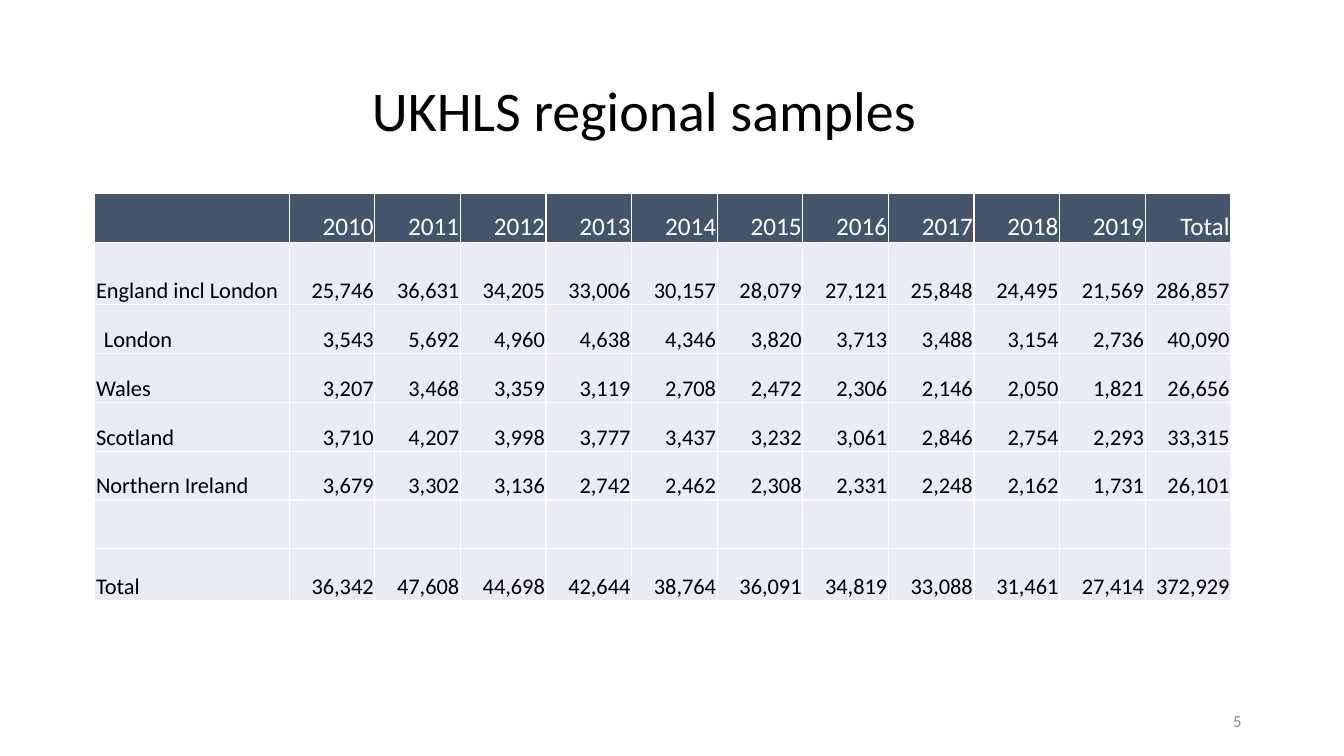
import dataclasses

import pptx
import pptx.dml.color
import pptx.enum.text
import pptx.oxml
import pptx.oxml.ns
import pptx.util

Cm = pptx.util.Cm
Pt = pptx.util.Pt
Align = pptx.enum.text.PP_ALIGN
Anchor = pptx.enum.text.MSO_ANCHOR


@dataclasses.dataclass(frozen=True)
class Theme:
    font: str = "Calibri"
    ink: str = "000000"
    paper: str = "FFFFFF"
    header: str = "44546A"
    body: str = "E9EBF5"
    muted: str = "8C8C8C"
    title_size: int = 40
    header_size: int = 18
    body_size: int = 16
    number_size: int = 12
    border_width: int = 1


@dataclasses.dataclass(frozen=True)
class Box:
    left: float
    top: float
    width: float
    height: float

    def lengths(self):
        return [Cm(value) for value in dataclasses.astuple(self)]


THEME = Theme()
LABEL_WIDTH = 4.9
ROW_HEIGHTS = [1.23, 1.57, 1.23, 1.23, 1.23, 1.23, 1.23, 1.3]
CELL_INSET = 0.03
NESTED_INSET = 0.23
NESTED_REGION = "London"

HEADINGS = ["", *map(str, range(2010, 2020)), "Total"]
SAMPLES = {
    "England incl London": [25746, 36631, 34205, 33006, 30157, 28079, 27121, 25848, 24495, 21569, 286857],
    "London": [3543, 5692, 4960, 4638, 4346, 3820, 3713, 3488, 3154, 2736, 40090],
    "Wales": [3207, 3468, 3359, 3119, 2708, 2472, 2306, 2146, 2050, 1821, 26656],
    "Scotland": [3710, 4207, 3998, 3777, 3437, 3232, 3061, 2846, 2754, 2293, 33315],
    "Northern Ireland": [3679, 3302, 3136, 2742, 2462, 2308, 2331, 2248, 2162, 1731, 26101],
    "": [],
    "Total": [36342, 47608, 44698, 42644, 38764, 36091, 34819, 33088, 31461, 27414, 372929],
}


def rgb(value):
    return pptx.dml.color.RGBColor.from_string(value)


def write(frame, text, size, color, alignment):
    para = frame.paragraphs[0]
    para.alignment = alignment
    if text:
        span = para.add_run()
        span.text = text
        span.font.name = THEME.font
        span.font.size = Pt(size)
        span.font.bold = False
        span.font.color.rgb = rgb(color)
    return para


def add_title(page, box, text):
    title = page.shapes.title
    title.left, title.top, title.width, title.height = box.lengths()
    title.text_frame.word_wrap = True
    title.text_frame.vertical_anchor = Anchor.MIDDLE
    para = write(title.text_frame, text, THEME.title_size, THEME.ink, Align.CENTER)
    para.line_spacing = 0.9


def add_page_number(page, box, number):
    frame = page.shapes.add_textbox(*box.lengths()).text_frame
    frame.word_wrap = True
    frame.vertical_anchor = Anchor.MIDDLE
    write(frame, str(number), THEME.number_size, THEME.muted, Align.RIGHT)


def add_borders(cell):
    properties = cell._tc.get_or_add_tcPr()
    for index, side in enumerate(["lnL", "lnR", "lnT", "lnB"]):
        border = pptx.oxml.parse_xml(
            f'<a:{side} {pptx.oxml.ns.nsdecls("a")} w="{Pt(THEME.border_width)}">'
            f'<a:solidFill><a:srgbClr val="{THEME.paper}"/></a:solidFill></a:{side}>'
        )
        properties.insert(index, border)


def format_cell(cell, text, is_header, is_label):
    cell.fill.solid()
    cell.fill.fore_color.rgb = rgb(THEME.header if is_header else THEME.body)
    add_borders(cell)
    cell.vertical_anchor = Anchor.BOTTOM
    cell.margin_left = Cm(NESTED_INSET if text == NESTED_REGION else CELL_INSET)
    cell.margin_right = cell.margin_top = Cm(CELL_INSET)
    cell.margin_bottom = 0
    size = THEME.header_size if is_header else THEME.body_size
    color = THEME.paper if is_header else THEME.ink
    write(cell.text_frame, text, size, color, Align.LEFT if is_label else Align.RIGHT)


def add_sample_table(page, box):
    rows = [HEADINGS]
    for region, counts in SAMPLES.items():
        values = [f"{count:,}" for count in counts]
        rows.append([region, *(values or [""] * (len(HEADINGS) - 1))])
    table = page.shapes.add_table(len(rows), len(HEADINGS), *box.lengths()).table
    table.first_row = False
    table.horz_banding = False
    year_width = (box.width - LABEL_WIDTH) / (len(HEADINGS) - 1)
    for index, column in enumerate(table.columns):
        column.width = Cm(year_width if index else LABEL_WIDTH)
    for row, height in zip(table.rows, ROW_HEIGHTS):
        row.height = Cm(height)
    for row_index, texts in enumerate(rows):
        for column_index, text in enumerate(texts):
            cell = table.cell(row_index, column_index)
            format_cell(cell, text, row_index == 0, column_index == 0)


def main():
    deck = pptx.Presentation()
    deck.slide_width = Cm(33.87)
    deck.slide_height = Cm(19.05)
    page = deck.slides.add_slide(deck.slide_layouts.get_by_name("Title Only"))
    page.background.fill.solid()
    page.background.fill.fore_color.rgb = rgb(THEME.paper)
    add_title(page, Box(1.78, 1.02, 29.21, 3.68), "UKHLS regional samples ")
    add_page_number(page, Box(30.3, 17.65, 1.24, 1.02), 5)
    add_sample_table(page, Box(2.39, 4.88, 28.63, sum(ROW_HEIGHTS)))
    deck.save("out.pptx")


if __name__ == "__main__":
    main()
